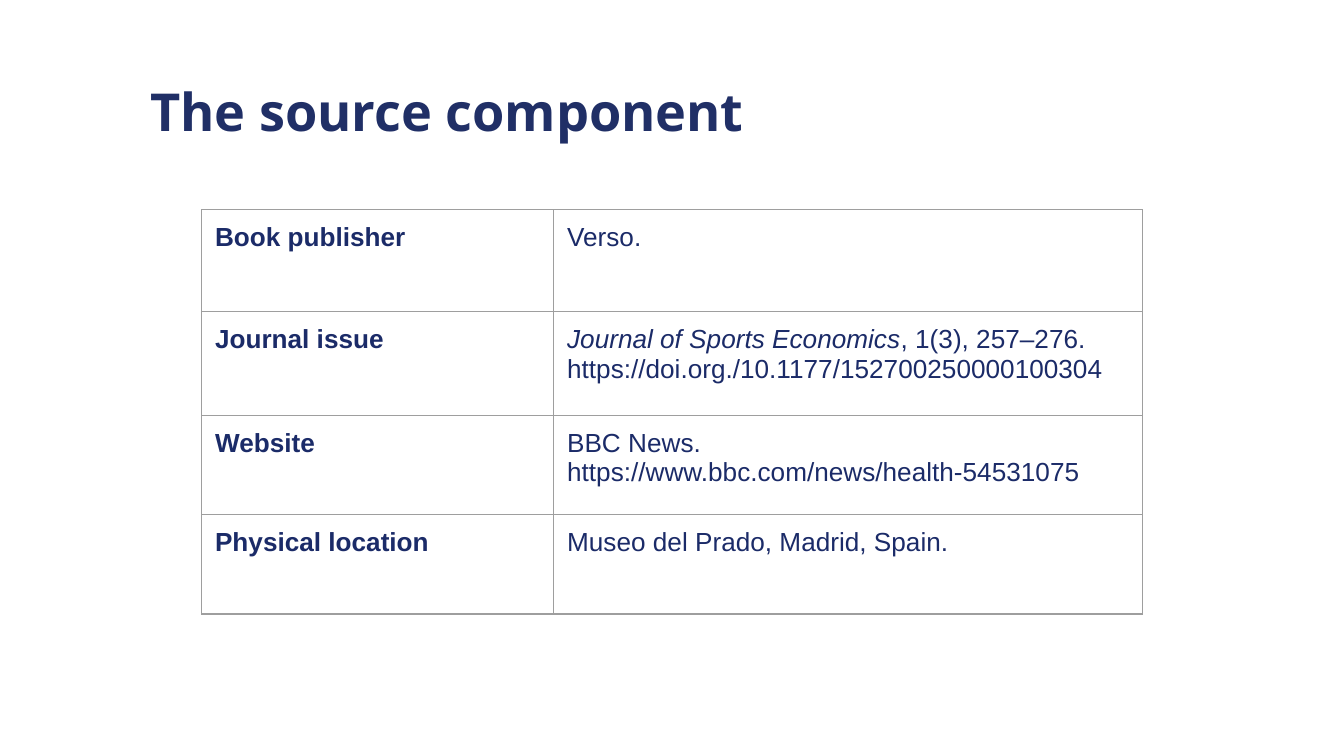
from lxml import etree
from pptx import Presentation
from pptx.dml.color import RGBColor
from pptx.enum.text import MSO_ANCHOR
from pptx.oxml.ns import qn
from pptx.util import Inches, Pt

MIDDLE, TOP = MSO_ANCHOR.MIDDLE, MSO_ANCHOR.TOP
WHITE = RGBColor(0xFF, 0xFF, 0xFF)
TITLE_NAVY = RGBColor(0x20, 0x2F, 0x66)
TEXT_NAVY = RGBColor(0x1B, 0x2B, 0x68)
BORDER_GREY = RGBColor(0x9E, 0x9E, 0x9E)

COLUMN_WIDTHS = [2.62, 4.38]
ROW_HEIGHTS = [0.76, 0.77, 0.74, 0.74]
# Each row: label, italic lead, remaining text
SOURCES = [
    ("Book publisher", "", "Verso."),
    ("Journal issue", "Journal of Sports Economics",
     ", 1(3), 257–276. https://doi.org./10.1177/152700250000100304"),
    ("Website", "", "BBC News.\vhttps://www.bbc.com/news/health-54531075"),
    ("Physical location", "", "Museo del Prado, Madrid, Spain."),
]


class SlideBuilder:
    title_font = "Open Sans"
    body_font = "Arial"
    inset = Inches(0.1)

    def __init__(self, slide):
        self.slide = slide

    def set_margins(self, box):
        box.margin_left = box.margin_right = self.inset
        box.margin_top = box.margin_bottom = self.inset

    def style(self, paragraph, name, size, color, bold):
        font = paragraph.font
        font.name, font.size, font.bold = name, Pt(size), bold
        font.color.rgb = color

    def title(self, text, left, top, width, height):
        shape = self.slide.shapes.add_textbox(
            Inches(left), Inches(top), Inches(width), Inches(height))
        frame = shape.text_frame
        frame.word_wrap = True
        frame.vertical_anchor = MIDDLE
        self.set_margins(frame)
        paragraph = frame.paragraphs[0]
        paragraph.text = text
        self.style(paragraph, self.title_font, 28, TITLE_NAVY, True)

    def borders(self, cell):
        properties = cell._tc.get_or_add_tcPr()
        for position, side in enumerate(("a:lnL", "a:lnR", "a:lnT", "a:lnB")):
            line = etree.Element(qn(side), w=str(Pt(0.75)))
            fill = etree.SubElement(line, qn("a:solidFill"))
            etree.SubElement(fill, qn("a:srgbClr"), val=str(BORDER_GREY))
            properties.insert(position, line)

    def cell(self, cell, lead, text, bold):
        cell.fill.solid()
        cell.fill.fore_color.rgb = WHITE
        cell.vertical_anchor = TOP
        self.set_margins(cell)
        self.borders(cell)
        paragraph = cell.text_frame.paragraphs[0]
        if lead:
            run = paragraph.add_run()
            run.text = lead
            run.font.italic = True
            paragraph.add_run().text = text
        else:
            paragraph.text = text
        self.style(paragraph, self.body_font, 14, TEXT_NAVY, bold)

    def table(self, rows, left, top, widths, heights):
        table = self.slide.shapes.add_table(
            len(rows), len(widths), Inches(left), Inches(top),
            Inches(sum(widths)), Inches(sum(heights))).table
        table.first_row = table.horz_banding = False
        for column, width in zip(table.columns, widths):
            column.width = Inches(width)
        for index, (label, lead, text) in enumerate(rows):
            table.rows[index].height = Inches(heights[index])
            self.cell(table.cell(index, 0), "", label, True)
            self.cell(table.cell(index, 1), lead, text, False)


def main():
    presentation = Presentation()
    # Widescreen, 16:9
    presentation.slide_width = Inches(10)
    presentation.slide_height = Inches(10 * 9 / 16)
    slide = presentation.slides.add_slide(presentation.slide_layouts[6])
    builder = SlideBuilder(slide)

    # Heading
    builder.title("The source component", 1.02, 0.51, 7.87, 0.63)

    # Source types and their examples
    builder.table(SOURCES, 1.5, 1.56, COLUMN_WIDTHS, ROW_HEIGHTS)

    presentation.save("out.pptx")


if __name__ == "__main__":
    main()
